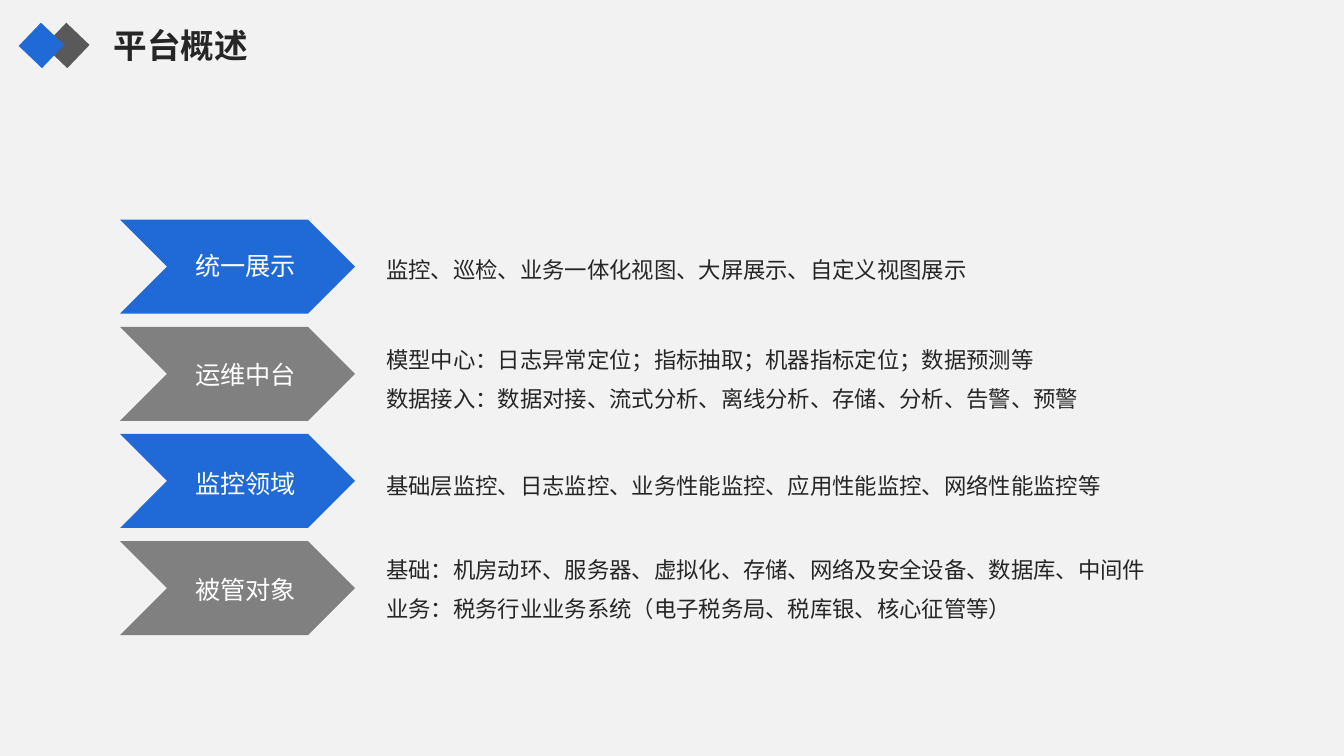
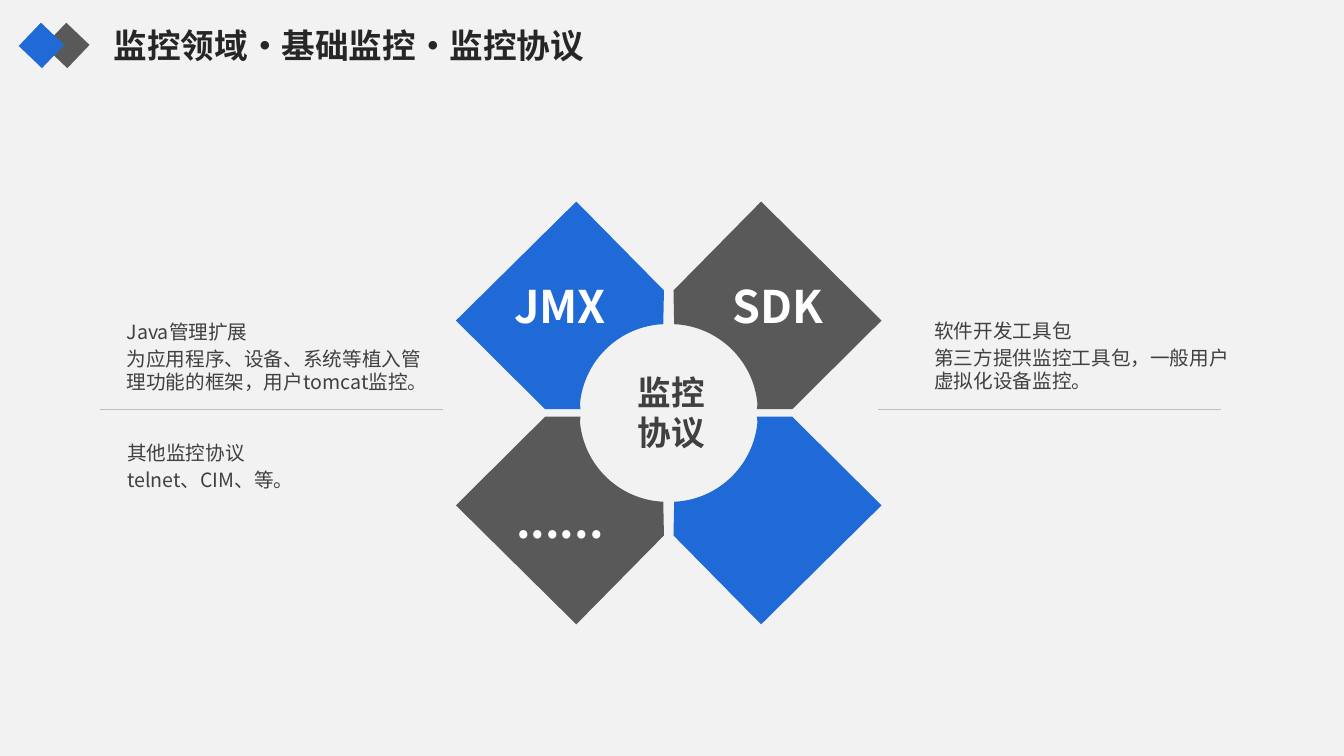
from lxml.etree import SubElement
from pptx import Presentation
from pptx.dml.color import RGBColor
from pptx.enum.shapes import MSO_CONNECTOR, MSO_SHAPE
from pptx.enum.text import MSO_ANCHOR as ANCHOR, PP_ALIGN as ALIGN
from pptx.oxml.ns import qn
from pptx.util import Pt

FONT = "Noto Sans CJK SC"
BLUE = RGBColor(0x20, 0x6A, 0xD7)
DARK = RGBColor(0x59, 0x59, 0x59)
GRAY = RGBColor(0x80, 0x80, 0x80)
INK = RGBColor(0x26, 0x26, 0x26)
BODY = RGBColor(0x40, 0x40, 0x40)
RULE = RGBColor(0xBF, 0xBF, 0xBF)
PAPER = RGBColor(0xF2, 0xF2, 0xF2)
WHITE = RGBColor(0xFF, 0xFF, 0xFF)
PADDING = (9.4, 5, 9.4, 5)

LAYERS = [
    ("统一展示", 18, ["监控、巡检、业务一体化视图、大屏展示、自定义视图展示"], 9.4, 46),
    ("运维中台", 20, ["模型中心：日志异常定位；指标抽取；机器指标定位；数据预测等",
                  "数据接入：数据对接、流式分析、离线分析、存储、分析、告警、预警"], 4.3, 60.5),
    ("监控领域", 21.2, ["基础层监控、日志监控、业务性能监控、应用性能监控、网络性能监控等"], 10.8, 46),
    ("被管对象", 20.3, ["基础：机房动环、服务器、虚拟化、存储、网络及安全设备、数据库、中间件",
                    "业务：税务行业业务系统（电子税务局、税库银、核心征管等）"], -4, 70.6),
]
PETALS = [("JMX", -1, -1, BLUE), ("SDK", 1, -1, DARK), ("......", -1, 1, DARK), ("", 1, 1, BLUE)]
NOTES = [
    (81.4, 310.2, ["其他监控协议", "telnet、CIM、等。"]),
    (81, 223.4, ["Java管理扩展", "为应用程序、设备、系统等植入管理功能的框架，用户tomcat监控。"]),
    (658, 222.5, ["软件开发工具包", "第三方提供监控工具包，一般用户虚拟化设备监控。"]),
]


def write(sp, lines, size, color, bold=False, align=ALIGN.LEFT, anchor=ANCHOR.TOP,
          inset=(7.2, 3.6, 7.2, 3.6), spacing=None, gap=0):
    """Fill a shape with one paragraph per line in a single format."""
    tf = sp.text_frame
    tf.word_wrap = True
    tf.vertical_anchor = anchor
    tf.margin_left, tf.margin_top, tf.margin_right, tf.margin_bottom = map(Pt, inset)
    for i, line in enumerate(lines):
        p = tf.add_paragraph() if i else tf.paragraphs[0]
        p.alignment = align
        p.line_spacing = spacing
        if i and gap:
            p.space_before = Pt(gap)
        r = p.add_run()
        r.text = line
        r.font.size, r.font.bold, r.font.name = Pt(size), bold, FONT
        r.font.color.rgb = color
        SubElement(r.font._element, qn("a:ea")).set("typeface", FONT)


def add_text(slide, box, lines, size, color, **fmt):
    """Add a text box at (left, top, width, height)."""
    write(slide.shapes.add_textbox(*map(Pt, box)), lines, size, color, **fmt)


def paint(sp, color):
    """Give a shape a flat fill without line or shadow."""
    sp.shadow.inherit = False
    sp.fill.solid()
    sp.fill.fore_color.rgb = color
    sp.line.fill.background()


def add_shape(slide, kind, box, color):
    """Add a flat preset shape."""
    sp = slide.shapes.add_shape(kind, *map(Pt, box))
    paint(sp, color)
    return sp


def add_rule(slide, x, y, width):
    """Draw a thin horizontal line."""
    line = slide.shapes.add_connector(MSO_CONNECTOR.STRAIGHT, Pt(x), Pt(y), Pt(x + width), Pt(y))
    line.line.color.rgb = RULE
    line.line.width = Pt(0.5)
    SubElement(line._element.spPr, qn("a:effectLst"))


def add_titled_slide(prs, title, width):
    """Add a blank slide with its title and the two diamonds."""
    slide = prs.slides.add_slide(prs.slide_layouts[6])
    add_text(slide, (74.1, 14.4, width, 36), [title], 24, INK, bold=True)
    for x, color in ((36.2, DARK), (18.1, BLUE)):
        add_shape(slide, MSO_SHAPE.RECTANGLE, (x, 21, 23, 23), color).rotation = 43.7
    return slide


def add_layer(slide, x, y, color, label, label_dy, lines, body_dy, body_height):
    """Place a chevron, its label and its description in one row."""
    add_shape(slide, MSO_SHAPE.CHEVRON, (x, y, 167.8, 67.1), color)
    add_text(slide, (x + 41.5, y + label_dy, 96.5, 29), [label], 18, WHITE, align=ALIGN.CENTER)
    add_text(slide, (x + 180.7, y + body_dy, 641, body_height), lines, 16, INK,
             anchor=ANCHOR.MIDDLE, inset=PADDING, spacing=1.3, gap=2.6)


def bend(sp, first):
    """Turn three line segments of an outline, from index first, into one curve."""
    path = next(sp._element.iter(qn("a:path")))
    segments = path.findall(qn("a:lnTo"))[first:first + 3]
    curve = SubElement(path, qn("a:cubicBezTo"))
    segments[0].addprevious(curve)
    for segment in segments:
        curve.append(segment[0])
        path.remove(segment)


def add_petal(slide, cx, cy, sx, sy, color, label):
    """Draw one cut diamond in the quadrant (sx, sy) around a centre."""
    outline = [(66, 151), (3.4, 87.5), (3.9, 63.4), (7.3, 63.2),
               (37, 60.2), (60.6, 36.7), (63.4, 6.5),
               (63, 2.7), (88.3, 2.7), (152, 66)]
    points = [(Pt(cx + sx * x), Pt(cy + sy * y)) for x, y in outline]
    builder = slide.shapes.build_freeform(*points[0])
    builder.add_line_segments(points[1:], close=True)
    sp = builder.convert_to_shape()
    bend(sp, 3)
    paint(sp, color)
    if label:
        write(sp, [label], 32, WHITE, bold=True, align=ALIGN.CENTER, anchor=ANCHOR.MIDDLE)


def build_overview(prs):
    """Build the slide of platform layers."""
    slide = add_titled_slide(prs, "平台概述", 240)
    for i, layer in enumerate(LAYERS):
        add_layer(slide, 85.8, 156.9 + 76.55 * i, (BLUE, GRAY)[i % 2], *layer)


def build_protocols(prs):
    """Build the slide of monitoring protocols."""
    slide = add_titled_slide(prs, "监控领域·基础监控·监控协议", 494)
    for label, sx, sy, color in PETALS:
        add_petal(slide, 477.7, 295, sx, sy, color, label)
    add_text(slide, (448.6, 262.1, 85, 65.5), ["监控", "协议"], 24, BODY, bold=True)
    for x in (71.4, 627.4):
        add_rule(slide, x, 292.3, 245)
    for x, y, lines in NOTES:
        add_text(slide, (x, y, 235.4, 65), lines, 14, BODY, inset=PADDING, gap=2.5)


def main():
    """Build and save the presentation."""
    prs = Presentation()
    prs.slide_width, prs.slide_height = Pt(960), Pt(540)
    fill = prs.slide_master.background.fill
    fill.solid()
    fill.fore_color.rgb = PAPER
    build_overview(prs)
    build_protocols(prs)
    prs.save("out.pptx")


if __name__ == "__main__":
    main()
